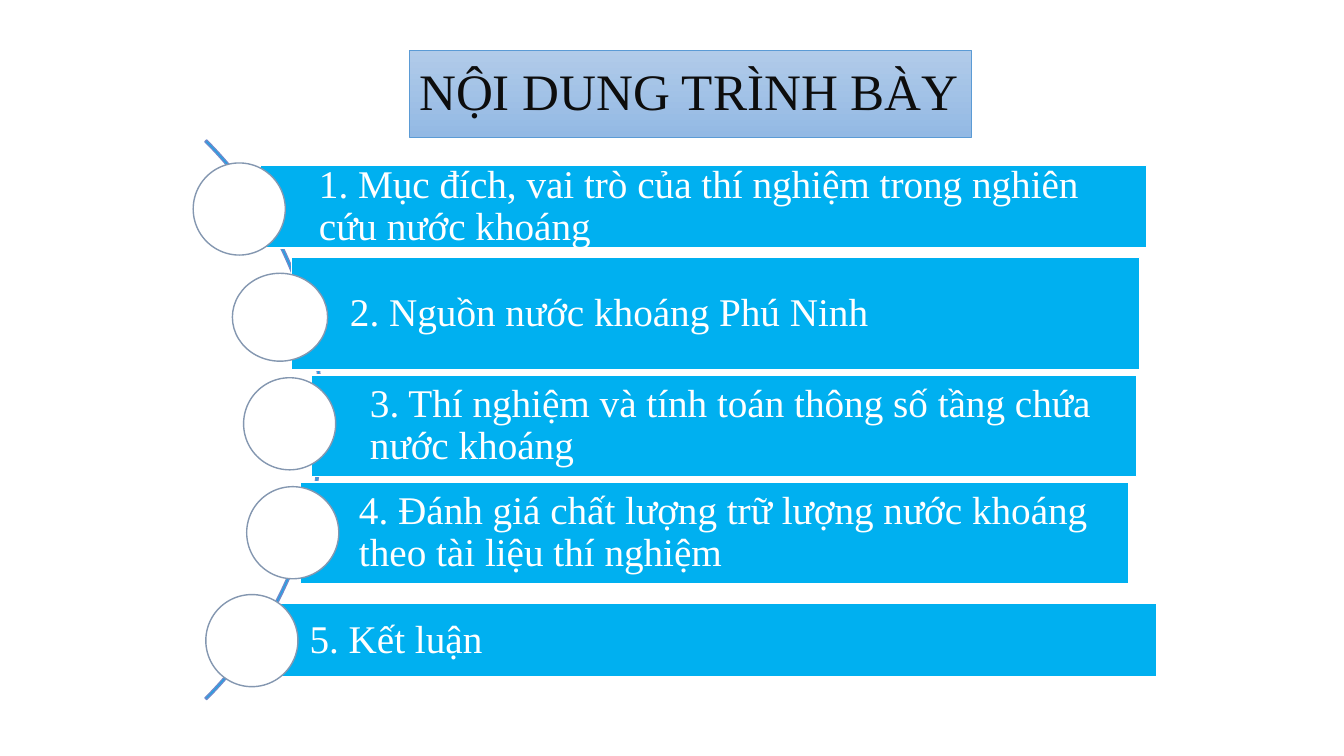
from pptx import Presentation
from pptx.dml.color import RGBColor
from pptx.enum import shapes, text
from pptx.util import Pt

deck = Presentation()
deck.slide_width, deck.slide_height = Pt(960), Pt(540)
slide = deck.slides.add_slide(deck.slide_layouts[6])
kind = shapes.MSO_SHAPE


def draw(form, box, fill, line, width=1):
    item = slide.shapes.add_shape(form, *[Pt(n) for n in box])
    item.shadow.inherit = False
    item.fill.solid()
    item.fill.fore_color.rgb = RGBColor.from_string(fill)
    item.line.color.rgb = RGBColor.from_string(line)
    item.line.width = Pt(width)
    return item


def write(item, words, size, color, left, right, edge):
    frame = item.text_frame
    frame.word_wrap = True
    frame.vertical_anchor = text.MSO_ANCHOR.MIDDLE
    frame.margin_left, frame.margin_right = Pt(left), Pt(right)
    frame.margin_top = frame.margin_bottom = Pt(edge)
    para = frame.paragraphs[0]
    para.alignment = text.PP_ALIGN.LEFT
    para.line_spacing = 0.9
    run = para.add_run()
    run.text = words
    run.font.name = "Times New Roman"
    run.font.size = Pt(size)
    run.font.color.rgb = RGBColor.from_string(color)


arc = draw(kind.BLOCK_ARC, (-334.8, 17.3, 565.2, 565.2), "00B0F0", "6D89CB")
arc.adjustments[0] = 189
arc.adjustments[1] = 27
arc.adjustments[2] = 0.003

topics = [
    ("1. Mục đích, vai trò của thí nghiệm trong nghiên cứu nước khoáng",
     (186, 118.2, 633, 59), (138, 116.4, 65.8, 65.8)),
    ("2. Nguồn nước khoáng Phú Ninh",
     (208.2, 183.9, 606, 80.3), (166, 195.2, 68, 62.8)),
    ("3. Thí nghiệm và tính toán thông số tầng chứa nước khoáng",
     (222.5, 268, 589.5, 72.5), (174, 269.8, 65.8, 65.8)),
    ("4. Đánh giá chất lượng trữ lượng nước khoáng theo tài liệu thí nghiệm",
     (214.6, 344.4, 591.8, 72.5), (176.2, 347.6, 65.8, 65.8)),
    ("5. Kết luận",
     (179.3, 431.2, 647.3, 52.4), (147, 424.7, 65.8, 65.8)),
]
for words, bar, dot in topics:
    strip = draw(kind.RECTANGLE, bar, "00B0F0", "FFFFFF")
    write(strip, words, 28, "FFFFFF", 41.8, 5.6, 5.6)
    draw(kind.OVAL, dot, "FFFFFF", "8497B0")

title = draw(kind.RECTANGLE, (292.3, 36, 401.8, 62), "B1CBE9", "5B9BD5", 0.5)
title.fill.gradient()
title.fill.gradient_angle = 270
for stop, shade in zip(title.fill.gradient_stops, ("B1CBE9", "93B9E4")):
    stop.color.rgb = RGBColor.from_string(shade)
write(title, "NỘI DUNG TRÌNH BÀY", 36.5, "0D0D0D", 7.2, 0, 3.6)

deck.save("out.pptx")
